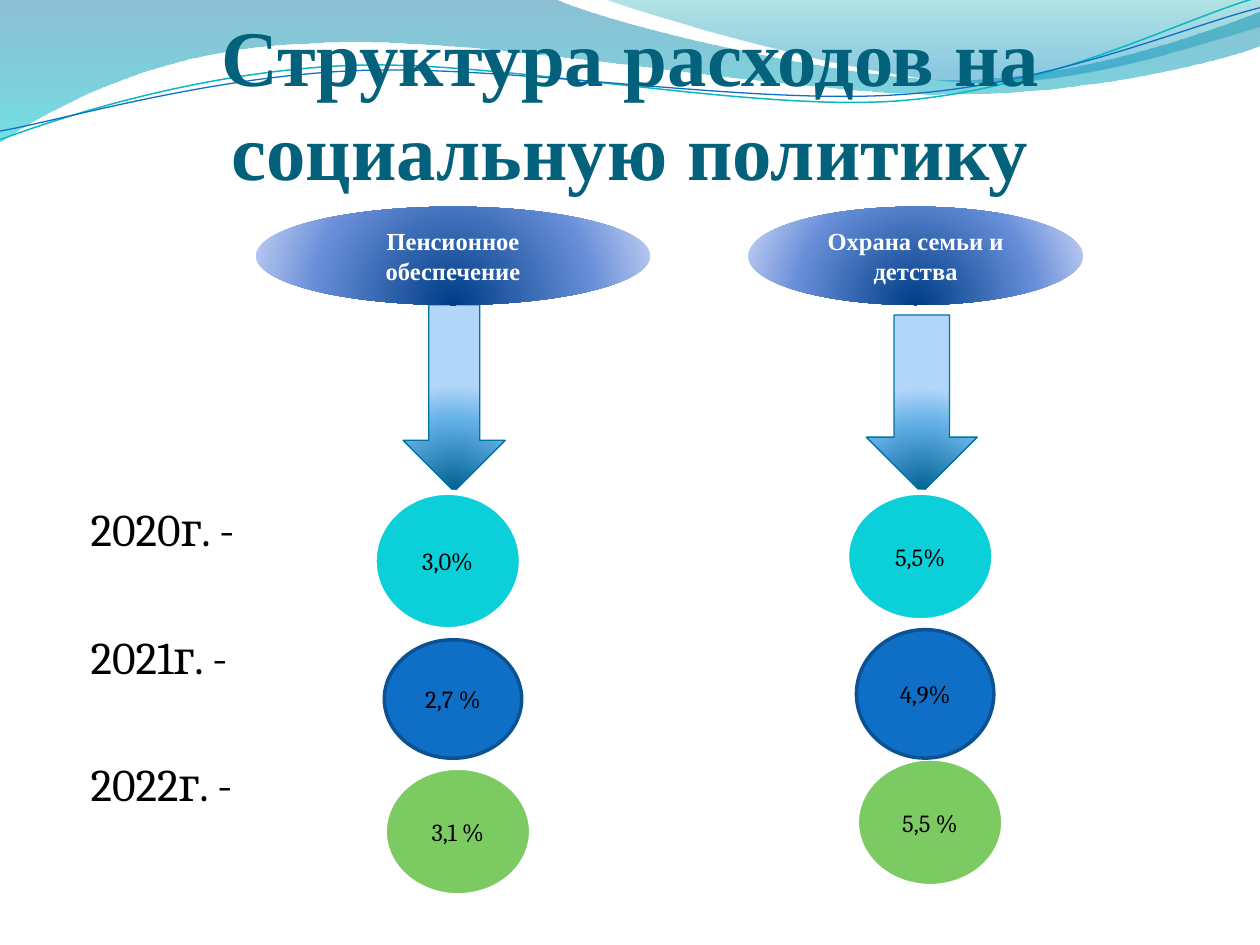
from pptx import Presentation
from pptx.dml.color import RGBColor
from pptx.enum.shapes import MSO_SHAPE
from pptx.enum.text import MSO_ANCHOR, MSO_AUTO_SIZE, PP_ALIGN
from pptx.oxml import parse_xml
from pptx.oxml.ns import nsdecls, qn
from pptx.util import Pt
from lxml import etree

DOWN = '<a:lin ang="5400000" scaled="0"/>'
GLOW = ('<a:path path="circle"><a:fillToRect l="50000" t="130000" '
        'r="50000" b="-30000"/></a:path>')


def paint(shape, fill=None, line=None, width=0):
    """Fill is a hex string or (stops, direction)."""
    shape.shadow.inherit = False
    props = shape.element.spPr
    if isinstance(fill, str):
        shape.fill.solid()
        shape.fill.fore_color.rgb = RGBColor.from_string(fill)
    else:
        shape.fill.background()
    if isinstance(fill, tuple):
        stops, course = fill
        marks = "".join(
            f'<a:gs pos="{pos * 1000}"><a:srgbClr val="{tone}">'
            f'<a:alpha val="{alpha * 1000}"/></a:srgbClr></a:gs>'
            for pos, tone, alpha in stops)
        props.replace(props.find(qn("a:noFill")), parse_xml(
            f'<a:gradFill {nsdecls("a")} rotWithShape="1">'
            f'<a:gsLst>{marks}</a:gsLst>{course}</a:gradFill>'))
    if line:
        shape.line.color.rgb = RGBColor.from_string(line)
        shape.line.width = Pt(width)
    else:
        shape.line.fill.background()


def style(para, size, font, tone, bold=False):
    for run in para.runs:
        run.font.size = Pt(size)
        run.font.name = font
        run.font.bold = bold
        run.font.color.rgb = RGBColor.from_string(tone)


deck = Presentation()
deck.slide_width, deck.slide_height = Pt(720), Pt(540)
slide = deck.slides.add_slide(deck.slide_layouts[1])
shapes = slide.shapes

# Waves: two numbers are a straight step, six are a Bezier curve
waves = [
    ([(0, 0), (316.8, -0.7), (342.7, 12.2, 478.1, 45.4, 545.8, 45.4),
      (614.2, 45.4, 689.8, 18.7, 720, 6.5), (720.7, 25.9),
      (707.8, 31.7, 626.4, 54.7, 537.1, 54),
      (447.8, 54, 275, 20.2, 185, 24.5),
      (92.9, 25.9, 33.1, 59.8, -0.7, 81.4), (0, 0)],
     ([(0, "0074A1", 45), (100, "00C6CF", 55)], DOWN), None, 0, 0),
    ([(344.9, -0.7), (366.5, 7.9, 491, 44.6, 553.7, 46.8),
      (616.3, 49.7, 691.9, 23, 720, 15.1), (720, 0), (344.9, -0.7)],
     ([(0, "00A1A9", 30), (80, "008BBF", 45)], DOWN), None, 0, 0),
    ([(-1.4, 62.9), (33.7, 51.7, 114, 29.4, 199.8, 29.9),
      (284.8, 30.3, 425.8, 67.2, 512.4, 64.9),
      (599, 62.4, 676.4, 25.7, 720.1, 15.6)], None, "0AB8BF", 0.85, 357.3),
    ([(-1.1, 57.9), (33, 53.8, 118.3, 32.5, 204, 33),
      (290.5, 33.5, 428.9, 63.8, 515.5, 61.3),
      (601.4, 59.6, 678.5, 30.1, 721.4, 21.4)], None, "0F6FC6", 0.75, 357.3),
]
for depth, (route, fill, line, width, turn) in enumerate(waves):
    dots = [(Pt(part[i]), Pt(part[i + 1]))
            for part in route for i in range(0, len(part), 2)]
    pen = shapes.build_freeform(*dots[0])
    pen.add_line_segments(dots[1:], close=fill is not None)
    wave = pen.convert_to_shape()
    steps = iter(list(wave.element.iter(qn("a:lnTo"))))
    for part in route[1:]:
        step = next(steps)
        if len(part) == 6:
            curve = etree.Element(qn("a:cubicBezTo"))
            step.getparent().replace(step, curve)
            for knot in (step, next(steps), next(steps)):
                curve.append(knot.find(qn("a:pt")))
                if knot.getparent() is not None:
                    knot.getparent().remove(knot)
    wave.rotation = turn
    paint(wave, fill, line, width)
    shapes.element.insert(2 + depth, wave.element)

title = shapes.title
title.left, title.top, title.width, title.height = Pt(36), Pt(20.9), Pt(648), Pt(91.4)
frame = title.text_frame
frame.text = "Структура расходов на социальную политику"
frame.auto_size = MSO_AUTO_SIZE.NONE
frame.vertical_anchor = MSO_ANCHOR.BOTTOM
frame.margin_left = frame.margin_right = frame.margin_bottom = 0
head = frame.paragraphs[0]
head.alignment = PP_ALIGN.CENTER
head.line_spacing = 1.0
style(head, 45, "Times New Roman", "04617B", True)

body = slide.placeholders[1]
body.left, body.top, body.width, body.height = Pt(44.6), Pt(101.5), Pt(648), Pt(401)
frame = body.text_frame
frame.text = "\n".join(f"{year}г. -" for year in (2020, 2021, 2022))
frame.auto_size = MSO_AUTO_SIZE.NONE
frame.margin_top = Pt(185)
for row, para in enumerate(frame.paragraphs):
    para.space_before = Pt(41.5 if row else 0)
    style(para, 26, "Cambria", "000000")
    props = para._p.get_or_add_pPr()
    props.set("marL", str(Pt(21.6)))
    props.set("indent", str(Pt(-21.6)))
    etree.SubElement(props, qn("a:buNone"))

sky = ([(0, "006091", 100), (68, "64B1E7", 100), (100, "B1D6F9", 100)], GLOW)
navy = ([(0, "003D87", 100), (68, "668DD7", 100), (100, "B3C4EF", 100)], GLOW)

for box in [(230.4, 174.2, 58.3, 106.6), (495, 180, 63.4, 101.5)]:
    arrow = shapes.add_shape(MSO_SHAPE.DOWN_ARROW, *map(Pt, box))
    paint(arrow, sky, "0074A1", 0.75)

looks = {
    "2020": ("0BD0D9", "FFFFFF", 3),
    "2021": ("0F6FC6", "0B5292", 2),
    "2022": ("7CCA62", "FFFFFF", 3),
    "head": (navy,),
}
ovals = [
    ("2020", "3,0%", 213.8, 281.3, 84.2, 78.5),
    ("2022", "3,1 %", 219.6, 438.5, 84.2, 73.4),
    ("2021", "2,7 %", 219.6, 365.6, 78.5, 67.7),
    ("2020", "5,5%", 483.8, 281.3, 84.2, 73.4),
    ("2022", "5,5 %", 489.4, 433.2, 84.2, 73.4),
    ("2021", "4,9%", 489.4, 359.8, 78.5, 73.4),
    ("head", "Пенсионное обеспечение", 146.2, 118.1, 225.4, 56.2),
    ("head", "Охрана семьи и детства", 427.5, 118.1, 191.5, 56.2),
]
for look, text, *box in ovals:
    oval = shapes.add_shape(MSO_SHAPE.OVAL, *map(Pt, box))
    paint(oval, *looks[look])
    frame = oval.text_frame
    frame.text = text
    frame.word_wrap = True
    frame.vertical_anchor = MSO_ANCHOR.MIDDLE
    label = frame.paragraphs[0]
    label.alignment = PP_ALIGN.CENTER
    if look == "head":
        style(label, 14, "Times New Roman", "FFFFFF", True)
    else:
        style(label, 14, "Cambria", "000000")

deck.save("out.pptx")
